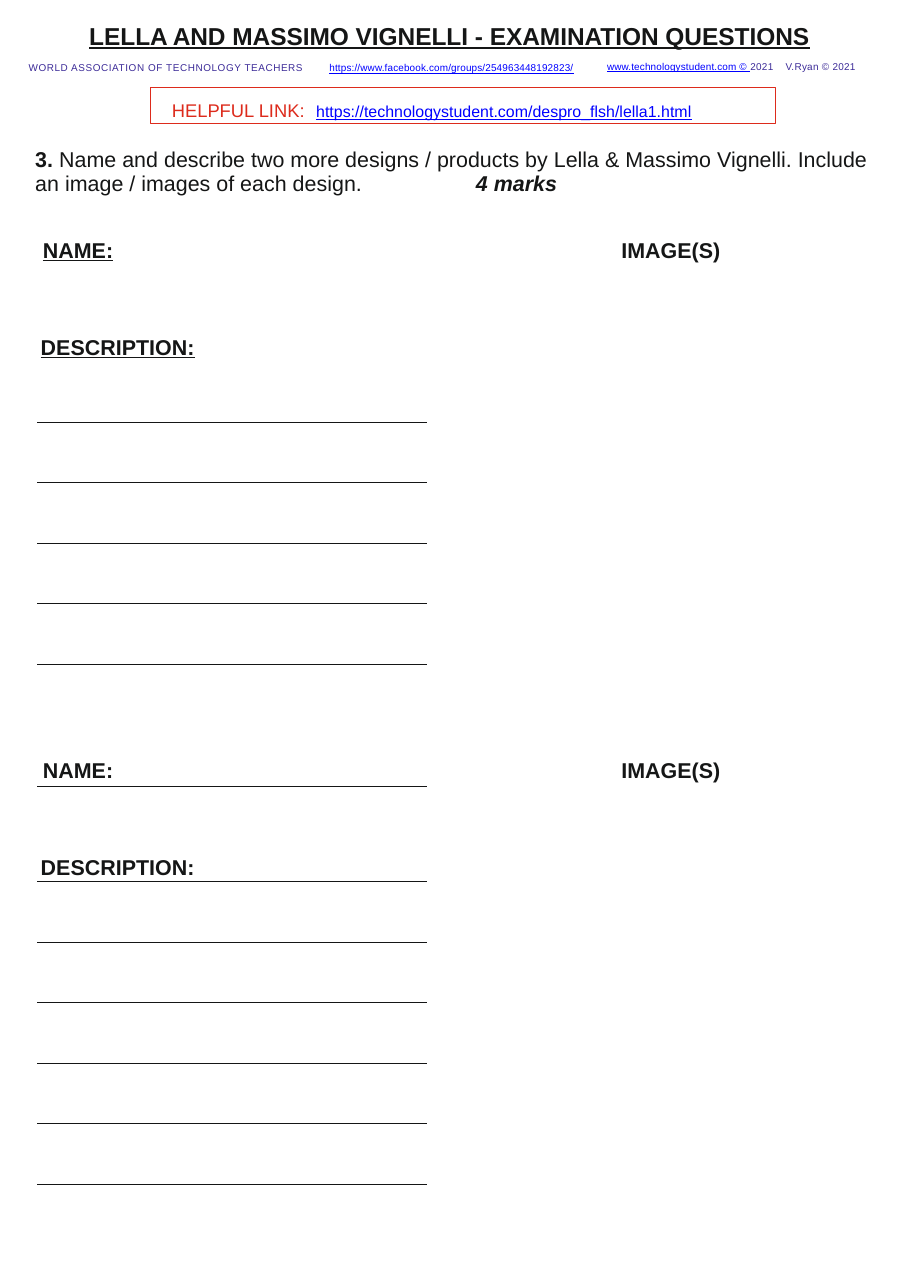
import pptx
import pptx.dml.color
import pptx.enum.shapes
import pptx.enum.text
import pptx.util
from pptx.util import Inches
import lxml.etree

INK = pptx.dml.color.RGBColor(0x15, 0x16, 0x16)
RED = pptx.dml.color.RGBColor(0xDD, 0x2B, 0x1C)
BLUE = pptx.dml.color.RGBColor(0x00, 0x00, 0xFF)
PURPLE = pptx.dml.color.RGBColor(0x3C, 0x2B, 0x98)
LINE_WIDTH = pptx.util.Pt(0.57)
DRAWING = "{http://schemas.openxmlformats.org/drawingml/2006/main}"

presentation = pptx.Presentation()
presentation.slide_width = Inches(8.26)
presentation.slide_height = Inches(11.69)
slide = presentation.slides.add_slide(presentation.slide_layouts[5])


def write(shape, place, runs, size, inset=(0.01, 0.01), tab=None, wrap=False):
    """Place a shape and fill it; a run is text, colour, spacing and font settings."""
    shape.left, shape.top, shape.width, shape.height = [Inches(n) for n in place]
    frame = shape.text_frame
    frame.margin_left, frame.margin_top = Inches(inset[0]), Inches(inset[1])
    frame.margin_right = frame.margin_bottom = 0
    frame.vertical_anchor = pptx.enum.text.MSO_ANCHOR.TOP
    frame.auto_size = pptx.enum.text.MSO_AUTO_SIZE.NONE
    frame.word_wrap = wrap
    paragraph = frame.paragraphs[0]
    paragraph.alignment = pptx.enum.text.PP_ALIGN.LEFT
    if tab:
        tabs = lxml.etree.SubElement(paragraph._p.get_or_add_pPr(), DRAWING + "tabLst")
        lxml.etree.SubElement(tabs, DRAWING + "tab", pos=str(Inches(tab)), algn="l")
    paragraph.font.name = "Arial"
    paragraph.font.size = pptx.util.Pt(size)
    for text, color, spacing, settings in runs:
        run = paragraph.add_run()
        run.text = text
        run.font.color.rgb = color
        for name, value in settings.items():
            setattr(run.font, name, value)
        run._r.get_or_add_rPr().set("spc", str(round(spacing * 100)))
    return paragraph


def add_text(place, *arguments, **options):
    box = slide.shapes.add_textbox(0, 0, 0, 0)
    return write(box, place, *arguments, **options)


# Title
write(slide.shapes.title, (0.8, 0.18, 6.59, 0.29),
      [("LELLA AND MASSIMO VIGNELLI - EXAMINATION QUESTIONS", INK, 0,
        {"bold": True, "underline": True})], 16)

# Credits under the title
add_text((0.25, 0.54, 5.02, 0.14),
         [("WORLD ASSOCIATION OF TECHNOLOGY TEACHERS\t", PURPLE, 0.4, {}),
          ("https://www.facebook.com/groups/254963448192823/", BLUE, 0.1,
           {"underline": True})],
         6.5, inset=(0.01, 0.02), tab=2.73)
add_text((5.5, 0.53, 2.32, 0.14),
         [("www.technologystudent.com © ", BLUE, 0.1, {"underline": True}),
          ("2021\tV.Ryan © 2021", PURPLE, 0.2, {})],
         6.5, inset=(0.01, 0.02), tab=1.62)

# Helpful link
link_box = slide.shapes.add_shape(pptx.enum.shapes.MSO_SHAPE.RECTANGLE, 0, 0, 0, 0)
link_box.shadow.inherit = False
link_box.fill.background()
link_box.line.color.rgb = RED
link_box.line.width = LINE_WIDTH
link_paragraph = write(
    link_box, (1.37, 0.79, 5.67, 0.33),
    [("HELPFUL LINK:\t", RED, 0, {}),
     ("https://technologystudent.com/despro_ﬂsh/lella1.html", BLUE, 0,
      {"underline": True, "size": pptx.util.Pt(18)})],
    12, inset=(0.19, 0.03), tab=1.31)
link_paragraph.runs[1]._r.get_or_add_rPr().set("baseline", "2000")

# Question
question = add_text(
    (0.31, 1.31, 7.65, 0.48),
    [("3. ", INK, 0, {"bold": True}),
     ("Name and describe two more designs / products by Lella & Massimo Vignelli. "
      "Include an image / images of each design.\t", INK, 0, {}),
     ("4 marks", INK, 0, {"bold": True, "italic": True})],
    14, inset=(0.01, 0.03), tab=4, wrap=True)
question.line_spacing = pptx.util.Pt(15.6)

# Two answer blocks: labels and ruled lines
for offset, underlined, extra_lines in ((0, True, []), (4.72, False, [2.42, 3.28])):
    for label, left, top, width, label_underlined in (
            ("NAME:", 0.38, 2.14, 0.67, underlined),
            ("DESCRIPTION:", 0.36, 3.02, 1.42, underlined),
            ("IMAGE(S)", 5.63, 2.14, 0.92, False)):
        add_text((left, top + offset, width, 0.26),
                 [(label, INK, 0, {"bold": True, "underline": label_underlined})], 14)
    for y in extra_lines + [3.83 + 0.55 * row for row in range(5)]:
        line = slide.shapes.add_connector(
            pptx.enum.shapes.MSO_CONNECTOR.STRAIGHT,
            Inches(0.34), Inches(y + offset), Inches(3.88), Inches(y + offset))
        line.line.color.rgb = INK
        line.line.width = LINE_WIDTH
        lxml.etree.SubElement(line._element.spPr, DRAWING + "effectLst")

presentation.save("out.pptx")
